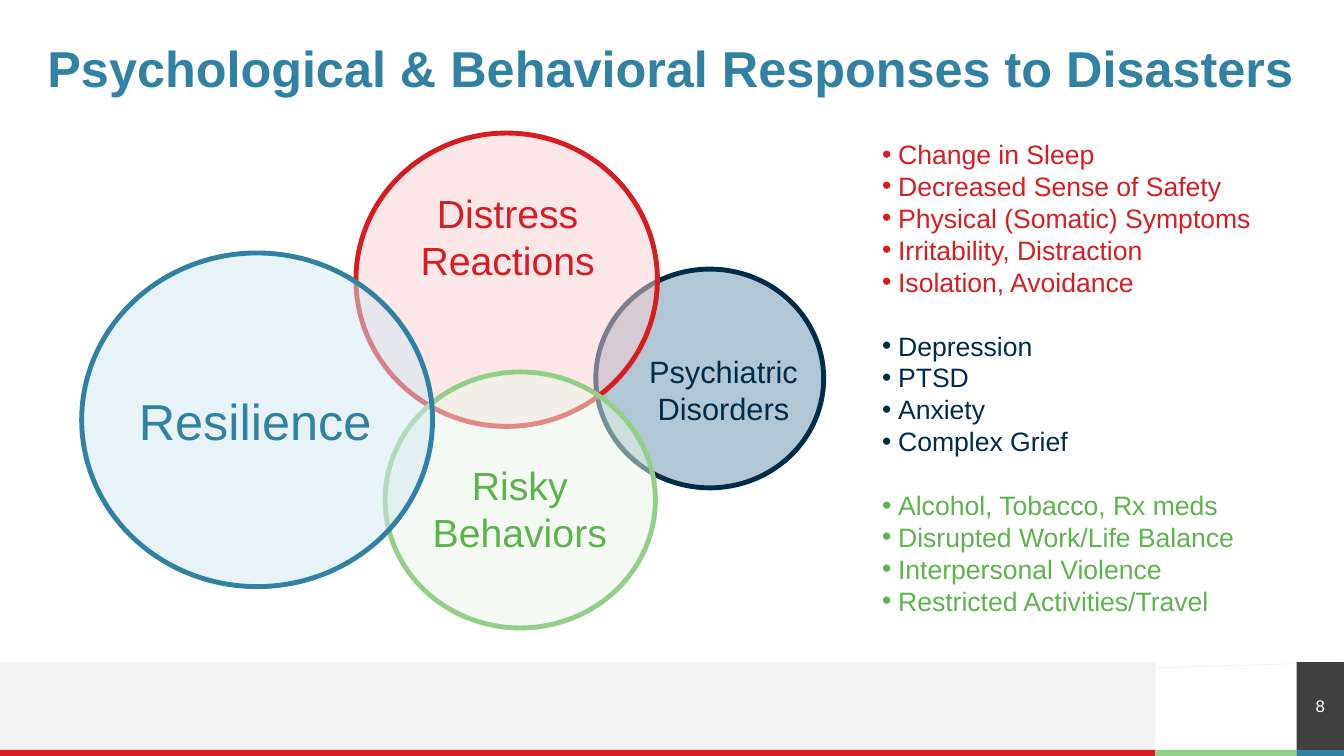
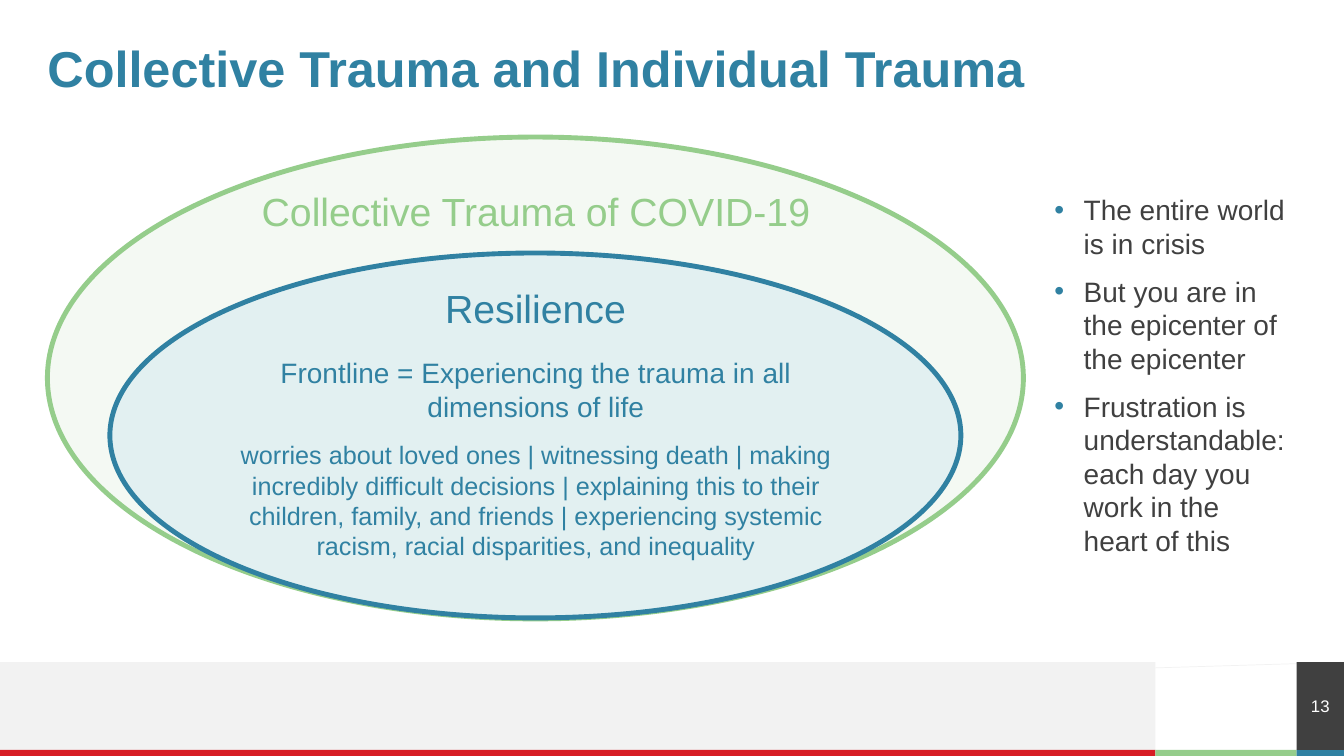
from dataclasses import dataclass

from lxml.etree import SubElement
from pptx import Presentation
from pptx.dml.color import RGBColor
from pptx.enum.shapes import MSO_CONNECTOR, MSO_SHAPE
from pptx.enum.text import MSO_ANCHOR as ANCHOR, PP_ALIGN as ALIGN
from pptx.oxml.ns import qn
from pptx.util import Inches, Pt


@dataclass(frozen=True)
class Theme:
    font: str = "Arial"
    leading: float = 1.2
    blue: str = "3081A2"
    pale_blue: str = "D1E8F1"
    red: str = "D71D24"
    pale_red: str = "F9D0D2"
    green: str = "95CD8B"
    pale_green: str = "EAF5E8"
    leaf: str = "5EB34F"
    navy: str = "002C47"
    sea: str = "004773"
    dark: str = "404040"
    band: str = "F2F2F2"
    white: str = "FFFFFF"
    title: int = 36
    large: int = 28
    medium: int = 22
    body: int = 20
    list: int = 19
    detail: int = 18
    number: int = 12
    outline: float = 3.5


T = Theme()
WIDTH, HEIGHT = 13.33, 7.5
MARGIN = 0.47
BAND_END, TAB_LEFT = 11.46, WIDTH - MARGIN
BAND_TOP, BAR_TOP = 6.57, 7.44

# Ellipses: box, fill, opacity in percent, outline
# Labels: box, then (text, size) paragraphs, colour
RESPONSES = {
    "title": "Psychological & Behavioral Responses to Disasters",
    "number": 8,
    "ellipses": [
        ((5.91, 2.67, 2.26, 2.17), T.sea, 30, T.navy),
        ((3.53, 1.32, 2.99, 2.91), T.pale_red, 50, T.red),
        ((3.82, 3.69, 2.68, 2.54), T.pale_green, 50, T.green),
        ((0.81, 2.51, 3.48, 3.31), T.pale_blue, 50, T.blue),
    ],
    "labels": [
        ((6.15, 3.45, 2.05, 0.84), [("Psychiatric Disorders", T.medium)], T.navy),
        ((3.8, 4.53, 2.71, 1.04), [("Risky Behaviors", T.large)], T.leaf),
        ((3.57, 1.83, 2.93, 1.04), [("Distress Reactions", T.large)], T.red),
        ((0.79, 3.82, 3.48, 0.71), [("Resilience", T.title)], T.blue),
    ],
}
SYMPTOMS_BOX = (8.65, 1.32, 4, 4.9)
SYMPTOMS = [
    (T.red, ["Change in Sleep", "Decreased Sense of Safety",
             "Physical (Somatic) Symptoms", "Irritability, Distraction",
             "Isolation, Avoidance"]),
    (T.navy, ["Depression", "PTSD", "Anxiety", "Complex Grief"]),
    (T.leaf, ["Alcohol, Tobacco, Rx meds", "Disrupted Work/Life Balance",
              "Interpersonal Violence", "Restricted Activities/Travel"]),
]

TRAUMA = {
    "title": "Collective Trauma and Individual Trauma",
    "number": 13,
    "ellipses": [
        ((0.47, 1.36, 9.68, 4.78), T.pale_green, 50, T.green),
        ((1.09, 2.51, 8.44, 3.62), T.pale_blue, 50, T.blue),
    ],
    "labels": [
        ((2.31, 1.81, 6.01, 0.57), [("Collective Trauma of COVID-19", T.large)], T.green),
        ((3.57, 2.77, 3.48, 0.57), [("Resilience", T.large)], T.blue),
        ((2.1, 3.48, 6.43, 2.15), [
            ("Frontline = Experiencing the trauma in all dimensions of life", T.body),
            ("worries about loved ones | witnessing death | making incredibly "
             "difficult decisions | explaining this to their children, family, and "
             "friends | experiencing systemic racism, racial disparities, and "
             "inequality", T.detail),
        ], T.blue),
    ],
}
MESSAGES_BOX = (10.36, 1.33, 2.5, 4.78)
MESSAGES = [
    "The entire world is in crisis",
    "But you are in the epicenter of the epicenter",
    "Frustration is understandable: each day you work in the heart of this",
]


def rgb(color):
    return RGBColor.from_string(color)


def inches(box):
    return [Inches(v) for v in box]


def add_shape(slide, kind, box, fill, opacity=100, outline=None):
    sp = slide.shapes.add_shape(kind, *inches(box))
    sp.shadow.inherit = False
    sp.fill.solid()
    sp.fill.fore_color.rgb = rgb(fill)
    if opacity < 100:
        color = sp.fill._xPr.find(".//" + qn("a:srgbClr"))
        SubElement(color, qn("a:alpha"), val=str(opacity * 1000))
    if outline:
        sp.line.color.rgb = rgb(outline)
        sp.line.width = Pt(T.outline)
    else:
        sp.line.fill.background()
    return sp


def set_frame(sp, anchor=ANCHOR.TOP, inset=True):
    tf = sp.text_frame
    tf.word_wrap = True
    tf.vertical_anchor = anchor
    if not inset:
        tf.margin_left = tf.margin_right = tf.margin_top = tf.margin_bottom = 0
    return tf


def add_box(slide, box, **frame):
    return set_frame(slide.shapes.add_textbox(*inches(box)), **frame)


def add_bullet(p, indent, color):
    pPr = p._p.get_or_add_pPr()
    pPr.set("marL", str(Inches(indent)))
    pPr.set("indent", str(-Inches(indent)))
    SubElement(SubElement(pPr, qn("a:buClr")), qn("a:srgbClr"), val=color)
    SubElement(pPr, qn("a:buFont"), typeface=T.font)
    SubElement(pPr, qn("a:buChar"), char="•")


def write(tf, text, size, color, align=ALIGN.LEFT, gap=0, spacing=None,
          bold=False, bullet=None):
    """Fill the first paragraph, or append one; bullet is (indent, colour)."""
    first = not tf.text
    p = tf.paragraphs[0] if first else tf.add_paragraph()
    p.text = text
    p.alignment = align
    p.line_spacing = spacing or Pt(size * T.leading)
    if not first:
        p.space_before = Pt(gap)
    if bullet:
        add_bullet(p, *bullet)
    for r in p.runs:
        r.font.name = T.font
        r.font.size = Pt(size)
        r.font.bold = bold
        r.font.color.rgb = rgb(color)


def add_footer(slide, number):
    band_height, bar_height = BAR_TOP - BAND_TOP, HEIGHT - BAR_TOP
    rect = MSO_SHAPE.RECTANGLE
    add_shape(slide, rect, (0, BAND_TOP, BAND_END, band_height), T.band)
    edges = [0, BAND_END, TAB_LEFT, WIDTH]
    for left, right, color in zip(edges, edges[1:], (T.red, T.green, T.blue)):
        add_shape(slide, rect, (left, BAR_TOP, right - left, bar_height), color)
    line = slide.shapes.add_connector(
        MSO_CONNECTOR.STRAIGHT, *inches((WIDTH, BAND_TOP, 0, 6.97)))
    line.line.color.rgb = rgb(T.band)
    line.line.width = Pt(0.5)
    SubElement(line._element.spPr, qn("a:effectLst"))
    tab = add_shape(slide, rect, (TAB_LEFT, BAND_TOP, MARGIN, band_height), T.dark)
    write(set_frame(tab, ANCHOR.MIDDLE, inset=False), str(number), T.number,
          T.white, ALIGN.CENTER, spacing=1.0)


def add_diagram_slide(prs, content):
    slide = prs.slides.add_slide(prs.slide_layouts[6])
    add_footer(slide, content["number"])
    title = add_box(slide, (MARGIN, MARGIN, WIDTH - 2 * MARGIN, MARGIN),
                    anchor=ANCHOR.MIDDLE, inset=False)
    write(title, content["title"], T.title, T.blue, spacing=0.9, bold=True)
    for box, fill, opacity, outline in content["ellipses"]:
        add_shape(slide, MSO_SHAPE.OVAL, box, fill, opacity, outline)
    for box, paragraphs, color in content["labels"]:
        tf = add_box(slide, box)
        for text, size in paragraphs:
            write(tf, text, size, color, ALIGN.CENTER, gap=12)
    return slide


def main():
    prs = Presentation()
    prs.slide_width, prs.slide_height = inches((WIDTH, HEIGHT))

    tf = add_box(add_diagram_slide(prs, RESPONSES), SYMPTOMS_BOX)
    for color, items in SYMPTOMS:
        for i, item in enumerate(items):
            write(tf, item, T.list, color, gap=0 if i else T.list * T.leading,
                  bullet=(0.16, color))

    tf = add_box(add_diagram_slide(prs, TRAUMA), MESSAGES_BOX, anchor=ANCHOR.MIDDLE)
    for message in MESSAGES:
        write(tf, message, T.body, T.dark, gap=10, bullet=(0.29, T.blue))

    prs.save("out.pptx")


if __name__ == "__main__":
    main()
